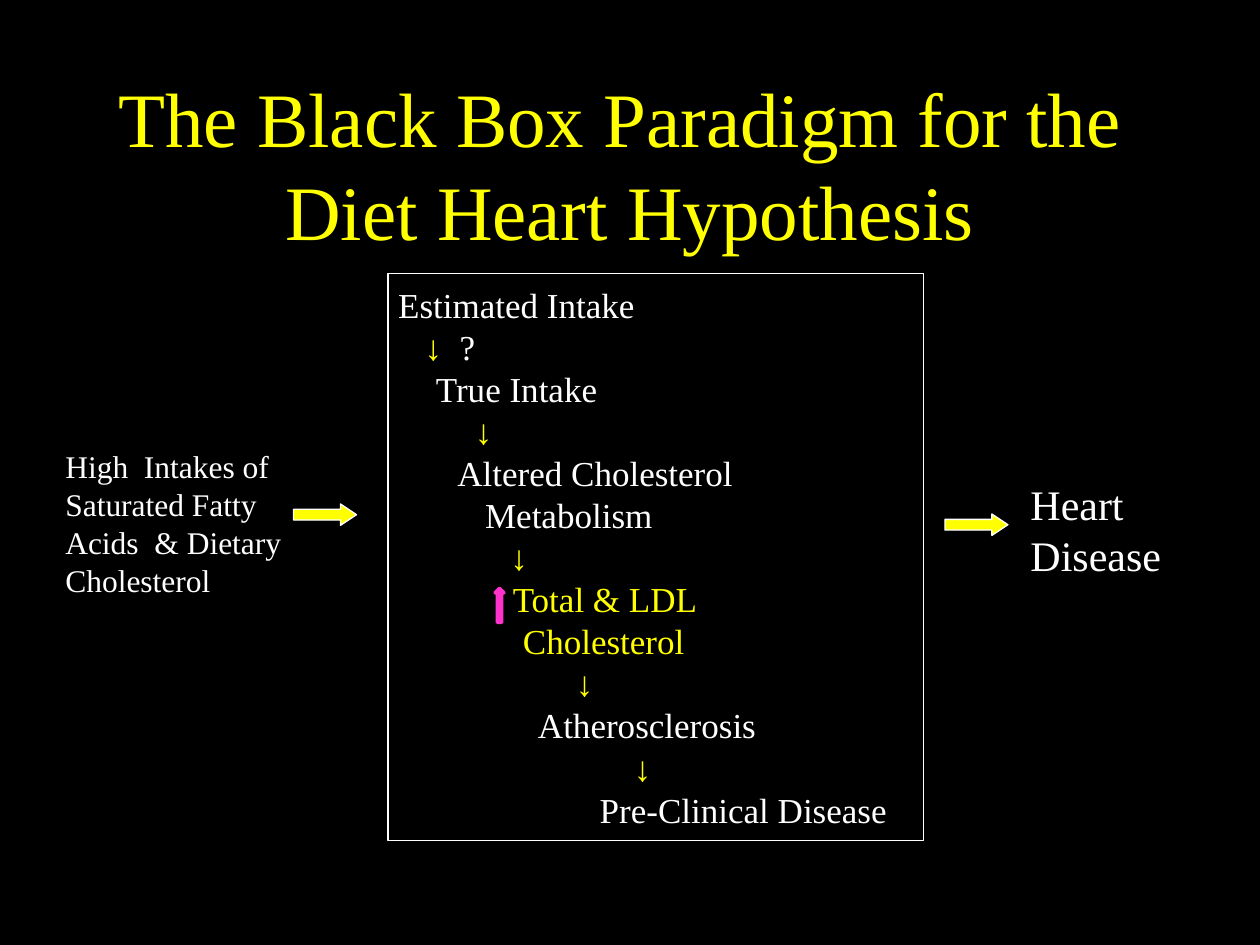
from pptx import Presentation
from pptx.dml.color import RGBColor
from pptx.enum import shapes, text
from pptx.util import Inches, Pt

WHITE, YELLOW, BLACK, PINK = "FFFFFF", "FFFF00", "000000", "FF33CC"


def color(hex_string):
    return RGBColor.from_string(hex_string)


def style(paragraph, size, hex_string):
    for run in paragraph.runs:
        run.font.name = "Times New Roman"
        run.font.size = Pt(size)
        run.font.color.rgb = color(hex_string)


deck = Presentation()
deck.slide_width, deck.slide_height = Inches(10), Inches(7.5)
slide = deck.slides.add_slide(deck.slide_layouts[6])
slide.background.fill.solid()
slide.background.fill.fore_color.rgb = color(BLACK)

labels = [
    ("The Black Box Paradigm for the \vDiet Heart Hypothesis",
     0.75, 0.67, 8.5, 1.25, 44, YELLOW, text.PP_ALIGN.CENTER, text.MSO_ANCHOR.MIDDLE),
    ("High  Intakes of Saturated Fatty Acids  & Dietary Cholesterol",
     0.42, 3.5, 2.08, 1.34, 18, WHITE, text.PP_ALIGN.LEFT, text.MSO_ANCHOR.TOP),
    ("Heart Disease",
     8.08, 3.75, 1.42, 0.9, 24, WHITE, text.PP_ALIGN.LEFT, text.MSO_ANCHOR.TOP),
]
for words, left, top, width, height, size, hue, align, anchor in labels:
    label = slide.shapes.add_textbox(Inches(left), Inches(top), Inches(width), Inches(height))
    frame = label.text_frame
    frame.word_wrap = True
    frame.vertical_anchor = anchor
    frame.text = words
    frame.paragraphs[0].alignment = align
    style(frame.paragraphs[0], size, hue)

kinds = shapes.MSO_SHAPE
outlines = [
    (kinds.RECTANGLE, 3.08, 2.17, 4.25, 4.5, BLACK, WHITE, 0.75),
    (kinds.RIGHT_ARROW, 2.33, 4, 0.5, 0.17, YELLOW, WHITE, 0.75),
    (kinds.RIGHT_ARROW, 7.5, 4.08, 0.5, 0.17, YELLOW, WHITE, 0.75),
    (kinds.UP_ARROW, 3.93, 4.67, 0.07, 0.27, PINK, PINK, 2),
]
drawn = []
for kind, left, top, width, height, fill, line, weight in outlines:
    outline = slide.shapes.add_shape(kind, Inches(left), Inches(top), Inches(width), Inches(height))
    outline.shadow.inherit = False
    outline.fill.solid()
    outline.fill.fore_color.rgb = color(fill)
    outline.line.color.rgb = color(line)
    outline.line.width = Pt(weight)
    if kind == kinds.RIGHT_ARROW:
        outline.adjustments[1] = 0.75
    drawn.append(outline)

steps = [
    ("Estimated Intake", 0, WHITE),
    ("↓  ?", 0.21, WHITE),
    ("True Intake", 0.3, WHITE),
    ("↓", 0.61, YELLOW),
    ("Altered Cholesterol", 0.47, WHITE),
    ("Metabolism", 0.69, WHITE),
    ("↓", 0.89, YELLOW),
    ("Total & LDL", 0.91, YELLOW),
    ("Cholesterol", 0.99, YELLOW),
    ("↓", 1.41, YELLOW),
    ("Atherosclerosis", 1.11, WHITE),
    ("↓", 1.87, YELLOW),
    ("Pre-Clinical Disease", 1.6, WHITE),
]
pathway = drawn[0].text_frame
pathway.word_wrap = True
pathway.margin_left = Inches(0.08)
pathway.vertical_anchor = text.MSO_ANCHOR.MIDDLE
pathway.text = "\n".join(words for words, indent, hue in steps)
for paragraph, (words, indent, hue) in zip(pathway.paragraphs, steps):
    paragraph.alignment = text.PP_ALIGN.LEFT
    paragraph.line_spacing = Pt(24)
    paragraph._p.get_or_add_pPr().set("marL", str(Inches(indent)))
    if words.endswith("?"):
        paragraph.text = "↓"
        paragraph.add_run().text = words[1:]
    style(paragraph, 20, hue)
    if words.startswith("↓"):
        paragraph.runs[0].font.color.rgb = color(YELLOW)

deck.save("out.pptx")
